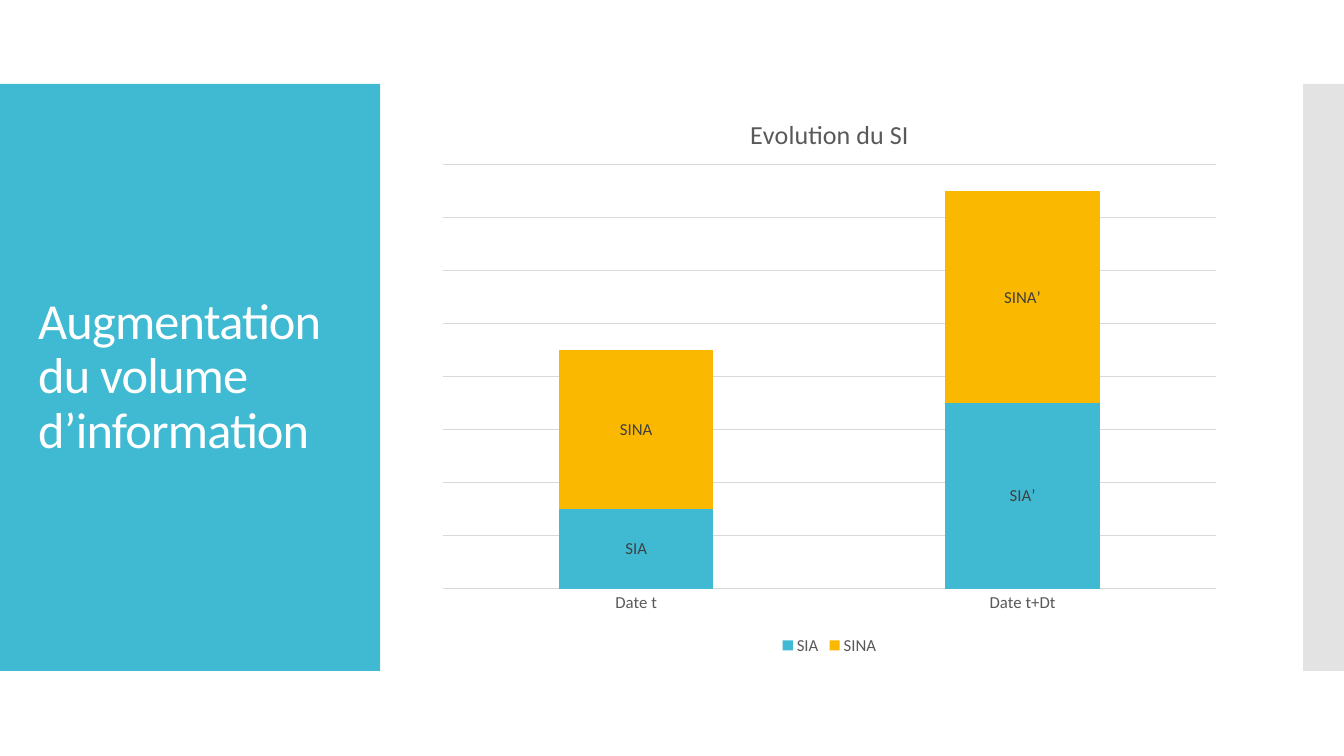
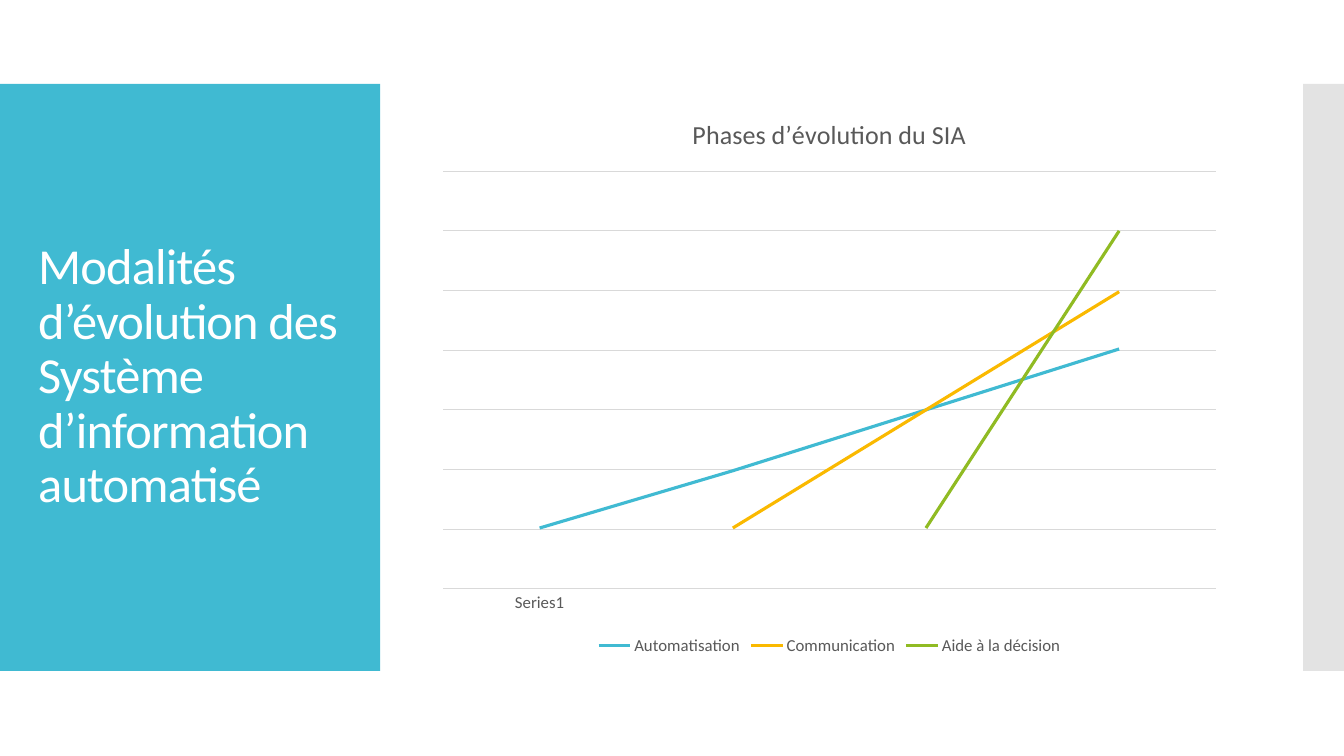
"""Build two slides that pair a title panel with a chart."""
from dataclasses import dataclass

from pptx import Presentation
from pptx import util as u
from pptx.chart.data import CategoryChartData
from pptx.dml.color import RGBColor
from pptx.enum import chart as ch, shapes, text
from pptx.oxml import parse_xml
from pptx.oxml.ns import nsdecls, qn


@dataclass(frozen=True)
class Theme:
    """Colours, font and type sizes."""
    teal: str = "40BAD2"
    gold: str = "FAB900"
    green: str = "90BB23"
    band: str = "C8C8C8"
    white: str = "FFFFFF"
    grid: str = "D9D9D9"
    grey: str = "595959"
    dark: str = "404040"
    font: str = "Calibri"
    title: float = 36
    head: float = 18.6
    label: float = 12


T = Theme()
COLS = (T.teal, T.gold, T.green)
PANEL = (0, 80, 362, 559)
EDGE = (1241, 80, 39, 559)
PLOT = (406, 90, 768, 538)


def px(n):
    """Turn pixels into EMU."""
    return u.Emu(n * 9525)


def rgb(hue):
    """Turn a hex string into a colour."""
    return RGBColor.from_string(hue)


def style(font, size, hue):
    """Set face, size and colour of a font."""
    font.name, font.size, font.bold = T.font, u.Pt(size), False
    font.color.rgb = rgb(hue)


def write(para, words, size, hue):
    """Add one styled run and return it."""
    run = para.add_run()
    run.text = words
    style(run.font, size, hue)
    return run


def stroke(line, hue, width):
    """Set colour and width of a line."""
    line.color.rgb = rgb(hue)
    line.width = u.Pt(width)


def block(slide, box, hue, alpha=100):
    """Draw a plain filled rectangle."""
    rect = slide.shapes.add_shape(shapes.MSO_SHAPE.RECTANGLE, *map(px, box))
    rect.shadow.inherit = False
    rect.fill.solid()
    rect.fill.fore_color.rgb = rgb(hue)
    rect.line.fill.background()
    if alpha < 100:
        tint = rect.fill._xPr.solidFill[0]
        tint.append(parse_xml(f'<a:alpha {nsdecls("a")} val="{alpha * 1000}"/>'))


def panel(slide, box, words):
    """Draw the coloured panel and its title."""
    left, top, wide, high = box
    block(slide, box, T.teal)
    area = (left + 27, top + 38, wide - 53, high - 76)
    frame = slide.shapes.add_textbox(*map(px, area)).text_frame
    frame.word_wrap = True
    frame.vertical_anchor = text.MSO_ANCHOR.MIDDLE
    para = frame.paragraphs[0]
    para.line_spacing = 0.9
    run = write(para, words, T.title, T.white)
    run.font._element.set("spc", "-60")


def inset(chart, box, top):
    """Fix the inner plot area, its top in px below the chart edge."""
    wide, high = box[2:]
    left, foot = 16, 67
    parts = {"x": left / wide, "y": top / high,
             "w": (wide - 2 * left) / wide, "h": (high - foot - top) / high}
    rows = "".join(f'<c:{k} val="{v:.4f}"/>' for k, v in parts.items())
    area = chart._chartSpace.chart.plotArea
    for old in area.findall(qn("c:layout")):
        area.remove(old)
    area.insert(0, parse_xml(
        f'<c:layout {nsdecls("c")}><c:manualLayout><c:layoutTarget val="inner"/>'
        f'<c:xMode val="edge"/><c:yMode val="edge"/>{rows}</c:manualLayout></c:layout>'))


def graph(slide, box, kind, head, cats, rows, top, step, drop):
    """Place a chart with shared title, axes and legend."""
    data = CategoryChartData()
    data.categories = cats
    for name, vals in rows:
        data.add_series(name, vals)
    chart = slide.shapes.add_chart(kind, *map(px, box), data).chart
    style(chart.font, T.label, T.grey)
    chart.has_title = True
    write(chart.chart_title.text_frame.paragraphs[0], head, T.head, T.grey)
    chart.chart_title.include_in_layout = False
    chart.has_legend = True
    chart.legend.position = ch.XL_LEGEND_POSITION.BOTTOM
    chart.legend.include_in_layout = False
    style(chart.legend.font, T.label, T.grey)
    base, axis = chart.category_axis, chart.value_axis
    base.major_tick_mark = ch.XL_TICK_MARK.NONE
    style(base.tick_labels.font, T.label, T.grey)
    stroke(base.format.line, T.grid, 0.75)
    axis.visible = False
    axis.minimum_scale, axis.maximum_scale, axis.major_unit = 0, top, step
    axis.has_major_gridlines = True
    stroke(axis.major_gridlines.format.line, T.grid, 0.75)
    inset(chart, box, drop)
    plot = chart.plots[0]
    plot.vary_by_categories = False
    return plot


def bars(slide, box):
    """Draw the stacked columns with a name on each part."""
    rows = [("SIA", (3, 7)), ("SINA", (6, 8))]
    plot = graph(slide, box, ch.XL_CHART_TYPE.COLUMN_STACKED, "Evolution du SI",
                 ("Date t", "Date t+Dt"), rows, 16, 2, 67)
    plot.gap_width, plot.overlap = 150, 100
    for part, hue, shown in zip(plot.series, COLS, (False, True)):
        part.format.fill.solid()
        part.format.fill.fore_color.rgb = rgb(hue)
        part.data_labels.show_value = shown
        style(part.data_labels.font, T.label, T.dark)
        for i, mark in enumerate(("", "’")):
            label = part.points[i].data_label
            write(label.text_frame.paragraphs[0], part.name + mark, T.label, T.dark)
            label.position = ch.XL_LABEL_POSITION.CENTER


def lines(slide, box):
    """Draw one straight line for each phase."""
    rows = [("Automatisation", (17, 33, 50, 67)),
            ("Communication", (None, 17, 50, 83)),
            ("Aide à la décision", (None, None, 17, 100))]
    plot = graph(slide, box, ch.XL_CHART_TYPE.LINE, "Phases d’évolution du SIA",
                 ("Series1", "", "", ""), rows, 116.69, 16.67, 73)
    for part, hue in zip(plot.series, COLS):
        part.smooth = False
        part.marker.style = ch.XL_MARKER_STYLE.NONE
        stroke(part.format.line, hue, 2.25)


def main():
    """Build and save the slides."""
    deck = Presentation()
    deck.slide_width, deck.slide_height = px(1280), px(720)
    pages = [("Augmentation du volume d’information", bars),
             ("Modalités d’évolution des Système d’information automatisé", lines)]
    for words, draw in pages:
        slide = deck.slides.add_slide(deck.slide_layouts[6])
        panel(slide, PANEL, words)
        block(slide, EDGE, T.band, 50)
        draw(slide, PLOT)
    deck.save("out.pptx")


if __name__ == "__main__":
    main()
